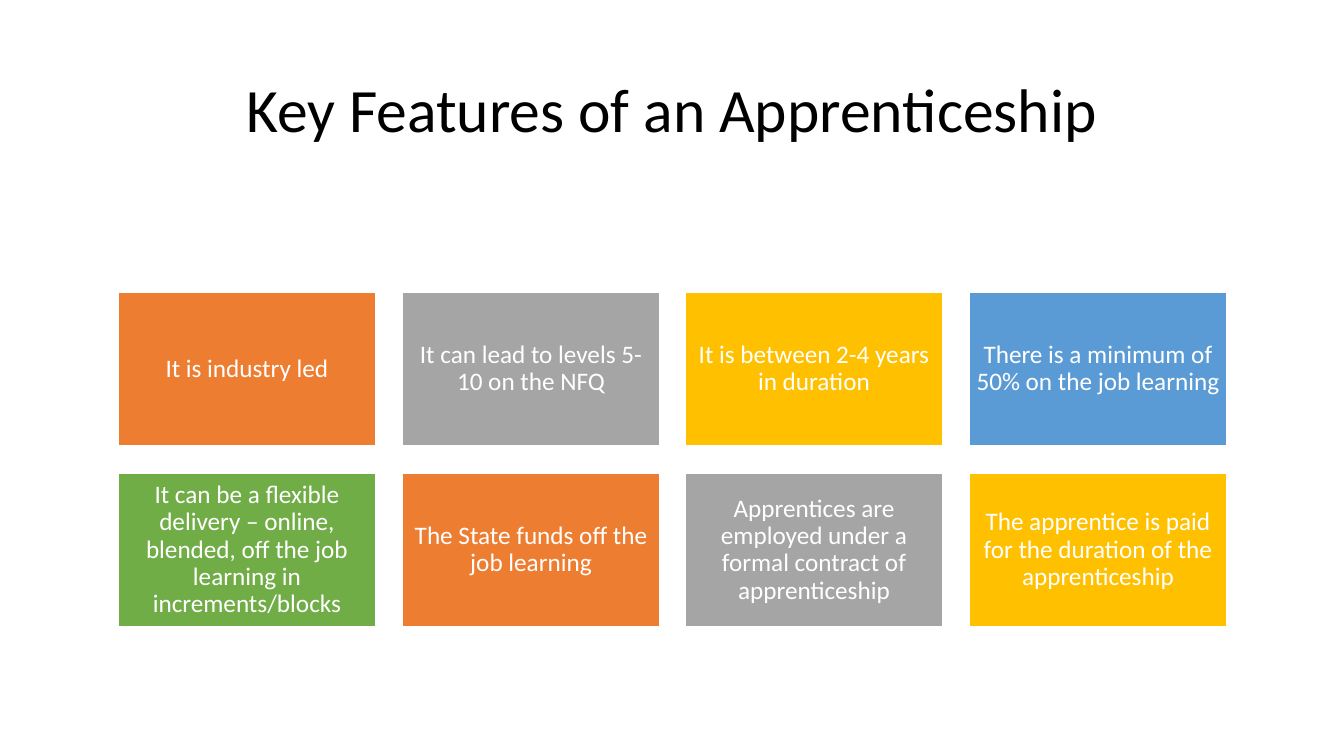
from pptx import Presentation
from pptx.dml.color import RGBColor
from pptx.enum.shapes import MSO_SHAPE as Shape
from pptx.enum.text import MSO_ANCHOR as Anchor, PP_ALIGN as Align
from pptx.util import Emu, Pt

EMU_PER_PX = 914400 / 100.8
PAGE_WIDTH, PAGE_HEIGHT = 1344, 756
COLORS = {
    "black": "000000",
    "white": "FFFFFF",
    "orange": "ED7D31",
    "grey": "A5A5A5",
    "gold": "FFC000",
    "blue": "5B9BD5",
    "green": "70AD47",
}
FEATURES = [
    ("orange", "It is industry led"),
    ("grey", "It can lead to levels 5-10 on the NFQ"),
    ("gold", "It is between 2-4 years in duration"),
    ("blue", "There is a minimum of 50% on the job learning"),
    ("green", "It can be a flexible delivery – online, blended, "
              "off the job learning in increments/blocks"),
    ("orange", "The State funds off the job learning"),
    ("grey", "Apprentices are employed under a formal contract of apprenticeship"),
    ("gold", "The apprentice is paid for the duration of the apprenticeship"),
]
COLUMNS = 4
GRID_LEFT, GRID_TOP, GRID_WIDTH = 118, 292, 1109
TILE_WIDTH, TILE_HEIGHT, ROW_STEP = 258, 154, 181


def px(length):
    return Emu(round(length * EMU_PER_PX))


def color(name):
    return RGBColor.from_string(COLORS[name])


class Painter:
    font_name = "Calibri"
    line_spacing = 0.9

    def __init__(self, page):
        self.page = page

    def centre_text(self, shape, text, size, color_name, margins):
        """Centre text in a shape, with (horizontal, vertical) margins in px."""
        frame = shape.text_frame
        across, down = map(px, margins)
        frame_format = {
            "word_wrap": True, "vertical_anchor": Anchor.MIDDLE,
            "margin_left": across, "margin_right": across,
            "margin_top": down, "margin_bottom": down,
        }
        for name, value in frame_format.items():
            setattr(frame, name, value)
        para = frame.paragraphs[0]
        para.alignment = Align.CENTER
        para.line_spacing = self.line_spacing
        span = para.add_run()
        span.text = text
        for name, value in {"name": self.font_name, "size": Pt(size)}.items():
            setattr(span.font, name, value)
        span.font.color.rgb = color(color_name)

    def title(self, text, *bounds):
        box = self.page.shapes.add_textbox(*map(px, bounds))
        self.centre_text(box, text, 44, "black", (10, 5))

    def tile(self, text, fill, *bounds):
        tile = self.page.shapes.add_shape(Shape.RECTANGLE, *map(px, bounds))
        tile.shadow.inherit = False
        tile.fill.solid()
        tile.fill.fore_color.rgb = color(fill)
        tile.line.color.rgb = color("white")
        tile.line.width = Pt(1.5)
        self.centre_text(tile, text, 18, "white", (7, 7))


def main():
    deck = Presentation()
    deck.slide_width, deck.slide_height = px(PAGE_WIDTH), px(PAGE_HEIGHT)
    painter = Painter(deck.slides.add_slide(deck.slide_layouts[6]))
    painter.title("Key Features of an Apprenticeship", 92, 40, 1160, 146)
    column_step = (GRID_WIDTH - TILE_WIDTH) / (COLUMNS - 1)
    for index, (fill, text) in enumerate(FEATURES):
        row, column = divmod(index, COLUMNS)
        painter.tile(text, fill, GRID_LEFT + round(column * column_step),
                     GRID_TOP + row * ROW_STEP, TILE_WIDTH, TILE_HEIGHT)
    deck.save("out.pptx")


if __name__ == "__main__":
    main()
